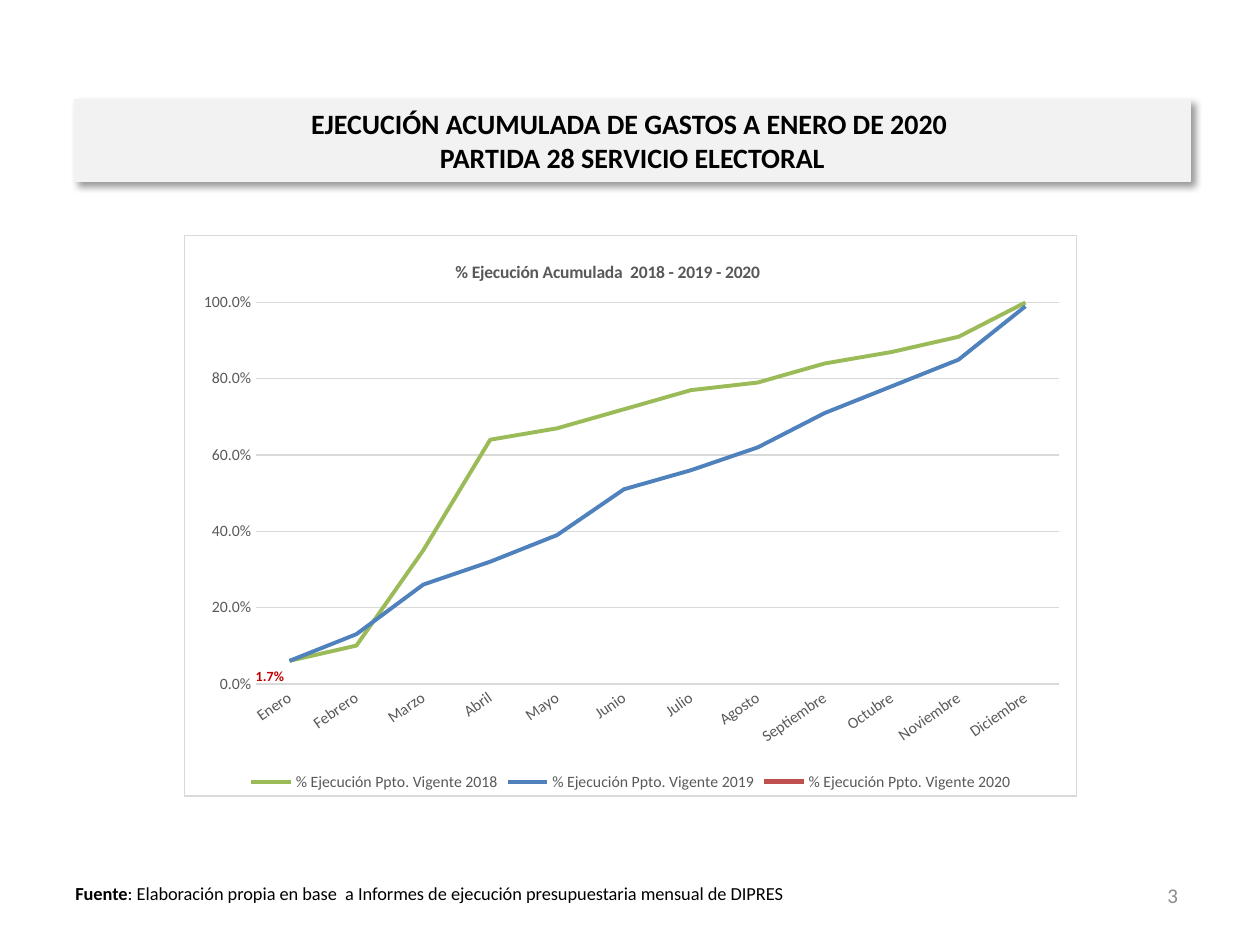
"""Build the slide on accumulated budget execution of the electoral service."""
from dataclasses import dataclass
from typing import Optional

from lxml.etree import SubElement
from pptx import Presentation
from pptx.chart.data import CategoryChartData
from pptx.dml.color import RGBColor
from pptx.enum.chart import (XL_CHART_TYPE, XL_LABEL_POSITION, XL_LEGEND_POSITION,
                             XL_MARKER_STYLE, XL_TICK_MARK)
from pptx.enum.shapes import MSO_SHAPE
from pptx.enum.text import MSO_ANCHOR, PP_ALIGN
from pptx.oxml import parse_xml
from pptx.oxml.ns import nsdecls, qn
from pptx.util import Cm, Pt

FONT = "Calibri"
COLORS = {
    "text": "000000", "number": "8C8C8C", "banner": "F2F2F2", "chart_text": "595959",
    "grid": "D9D9D9", "label": "C00000", "white": "FFFFFF",
    "2018": "9BBB59", "2019": "4F81BD", "2020": "C0504D",
}
MONTHS = ("Enero", "Febrero", "Marzo", "Abril", "Mayo", "Junio", "Julio", "Agosto",
          "Septiembre", "Octubre", "Noviembre", "Diciembre")


@dataclass(frozen=True)
class Box:
    left: float
    top: float
    width: float
    height: float

    def lengths(self) -> tuple:
        return Cm(self.left), Cm(self.top), Cm(self.width), Cm(self.height)


@dataclass(frozen=True)
class TextRun:
    text: str
    size: float
    color: str = "text"
    bold: bool = False


@dataclass(frozen=True)
class YearSeries:
    year: str
    values: tuple
    width: float


YEARS = (
    YearSeries("2018", (0.06, 0.1, 0.35, 0.64, 0.67, 0.72, 0.77, 0.79, 0.84, 0.87, 0.91, 1), 2.25),
    YearSeries("2019", (0.06, 0.13, 0.26, 0.32, 0.39, 0.51, 0.56, 0.62, 0.71, 0.78, 0.85, 0.99), 2.25),
    YearSeries("2020", (0.017,), 2.75),
)


def rgb(name: str) -> RGBColor:
    """Return a palette colour."""
    return RGBColor.from_string(COLORS[name])


def style_font(font, size: float, color: str, bold: bool = False) -> None:
    """Set typeface, size, colour and weight."""
    font.name = FONT
    font.size = Pt(size)
    font.bold = bold
    font.color.rgb = rgb(color)


def add_run(paragraph, text_run: TextRun) -> None:
    """Append one styled run."""
    run = paragraph.add_run()
    run.text = text_run.text
    style_font(run.font, text_run.size, text_run.color, text_run.bold)


def add_text(slide, box: Box, runs: tuple, alignment: PP_ALIGN, anchor: MSO_ANCHOR) -> None:
    """Add a wrapped text box with one paragraph."""
    frame = slide.shapes.add_textbox(*box.lengths()).text_frame
    frame.word_wrap = True
    frame.vertical_anchor = anchor
    paragraph = frame.paragraphs[0]
    paragraph.alignment = alignment
    for text_run in runs:
        add_run(paragraph, text_run)


def add_banner(slide, box: Box, lines: tuple) -> None:
    """Add the title bar with its soft shadow."""
    shape = slide.shapes.add_shape(MSO_SHAPE.RECTANGLE, *box.lengths())
    shape.fill.solid()
    shape.fill.fore_color.rgb = rgb("banner")
    shape.line.color.rgb = rgb("banner")
    shape.line.width = Pt(0.75)
    shape.shadow.inherit = False
    effects = shape._element.spPr.find(qn("a:effectLst"))
    effects.append(parse_xml(
        f'<a:outerShdw {nsdecls("a")} blurRad="{Pt(4)}" dist="{Pt(3)}" dir="2700000" algn="tl" '
        f'rotWithShape="0"><a:srgbClr val="{COLORS["text"]}"><a:alpha val="40000"/></a:srgbClr>'
        '</a:outerShdw>'))
    frame = shape.text_frame
    frame.word_wrap = True
    frame.vertical_anchor = MSO_ANCHOR.MIDDLE
    paragraph = frame.paragraphs[0]
    paragraph.alignment = PP_ALIGN.CENTER
    for index, line in enumerate(lines):
        if index:
            paragraph.add_line_break()
        add_run(paragraph, TextRun(line, 16, bold=True))


def set_layout(parent, position: int, x: float, y: float,
               size: Optional[tuple] = None) -> None:
    """Place a chart part by fractions of the chart area."""
    for previous in parent.findall(qn("c:layout")):
        parent.remove(previous)
    layout = parse_xml(f'<c:layout {nsdecls("c")}><c:manualLayout/></c:layout>')
    settings = [("xMode", "edge"), ("yMode", "edge"), ("x", x), ("y", y)]
    if size:
        settings.insert(0, ("layoutTarget", "inner"))
        settings += zip(("w", "h"), size)
    for name, value in settings:
        SubElement(layout[0], qn(f"c:{name}")).set("val", str(value))
    parent.insert(position, layout)


def style_axes(chart) -> None:
    """Format both axes and the gridlines."""
    for axis in (chart.category_axis, chart.value_axis):
        axis.major_tick_mark = XL_TICK_MARK.NONE
        axis.minor_tick_mark = XL_TICK_MARK.NONE
        style_font(axis.tick_labels.font, 9, "chart_text")
    months, percent = chart.category_axis, chart.value_axis
    months.format.line.color.rgb = rgb("grid")
    months.format.line.width = Pt(1)
    months._element.find(qn("c:txPr")).find(qn("a:bodyPr")).set("rot", "-2100000")
    percent.format.line.fill.background()
    percent.minimum_scale, percent.maximum_scale, percent.major_unit = 0, 1, 0.2
    percent.tick_labels.number_format = "0.0%"
    percent.tick_labels.number_format_is_linked = False
    percent.major_gridlines.format.line.color.rgb = rgb("grid")
    percent.major_gridlines.format.line.width = Pt(0.75)


def add_execution_chart(slide, box: Box) -> None:
    """Add the line chart of accumulated execution by month."""
    data = CategoryChartData(number_format="0.0%")
    data.categories = MONTHS
    for entry in YEARS:
        padding = (None,) * (len(MONTHS) - len(entry.values))
        data.add_series(f"% Ejecución Ppto. Vigente {entry.year}", entry.values + padding)
    chart = slide.shapes.add_chart(XL_CHART_TYPE.LINE, *box.lengths(), data).chart
    style_font(chart.font, 10, "text")
    space = chart._chartSpace
    space.insert(1, parse_xml(f'<c:roundedCorners {nsdecls("c")} val="0"/>'))
    space.find(qn("c:chart")).addnext(parse_xml(
        f'<c:spPr {nsdecls("c", "a")}><a:solidFill><a:srgbClr val="{COLORS["white"]}"/></a:solidFill>'
        f'<a:ln w="{Pt(0.75)}"><a:solidFill><a:srgbClr val="{COLORS["grid"]}"/></a:solidFill></a:ln>'
        '</c:spPr>'))
    chart.has_title = True
    title = "% Ejecución Acumulada  2018 - 2019 - 2020"
    add_run(chart.chart_title.text_frame.paragraphs[0], TextRun(title, 10, "chart_text", True))
    set_layout(chart.chart_title._element, 1, 0.3, 0.04)
    set_layout(space.find(qn("c:chart")).find(qn("c:plotArea")), 0, 0.08, 0.12, (0.9, 0.68))
    chart.has_legend = True
    chart.legend.position = XL_LEGEND_POSITION.BOTTOM
    chart.legend.include_in_layout = False
    style_font(chart.legend.font, 9, "chart_text")
    style_axes(chart)
    plot = chart.plots[0]
    plot.vary_by_categories = False
    for series, entry in zip(plot.series, YEARS):
        series.smooth = False
        series.marker.style = XL_MARKER_STYLE.NONE
        series.format.line.color.rgb = rgb(entry.year)
        series.format.line.width = Pt(entry.width)
    labels = plot.series[-1].data_labels
    labels.show_value = True
    labels.number_format = "0.0%"
    labels.number_format_is_linked = False
    labels.position = XL_LABEL_POSITION.LEFT
    style_font(labels.font, 8, "label", True)


def main() -> None:
    """Create and save the presentation."""
    presentation = Presentation()
    presentation.slide_width, presentation.slide_height = Cm(25.4), Cm(19.05)
    slide = presentation.slides.add_slide(presentation.slide_layouts[6])
    source = "Elaboración propia en base  a Informes de ejecución presupuestaria mensual de DIPRES"
    add_text(slide, Box(1.27, 17.65, 15.01, 0.71),
             (TextRun("Fuente", 10.5, bold=True), TextRun(f": {source}", 10.5)),
             PP_ALIGN.LEFT, MSO_ANCHOR.TOP)
    add_text(slide, Box(18.08, 17.53, 5.92, 1.02), (TextRun("3", 12, "number"),),
             PP_ALIGN.RIGHT, MSO_ANCHOR.MIDDLE)
    add_banner(slide, Box(1.5, 2, 22.5, 1.65),
               ("EJECUCIÓN ACUMULADA DE GASTOS A ENERO DE 2020 ", "PARTIDA 28 SERVICIO ELECTORAL"))
    add_execution_chart(slide, Box(3.71, 4.73, 18.01, 11.33))
    presentation.save("out.pptx")


if __name__ == "__main__":
    main()
